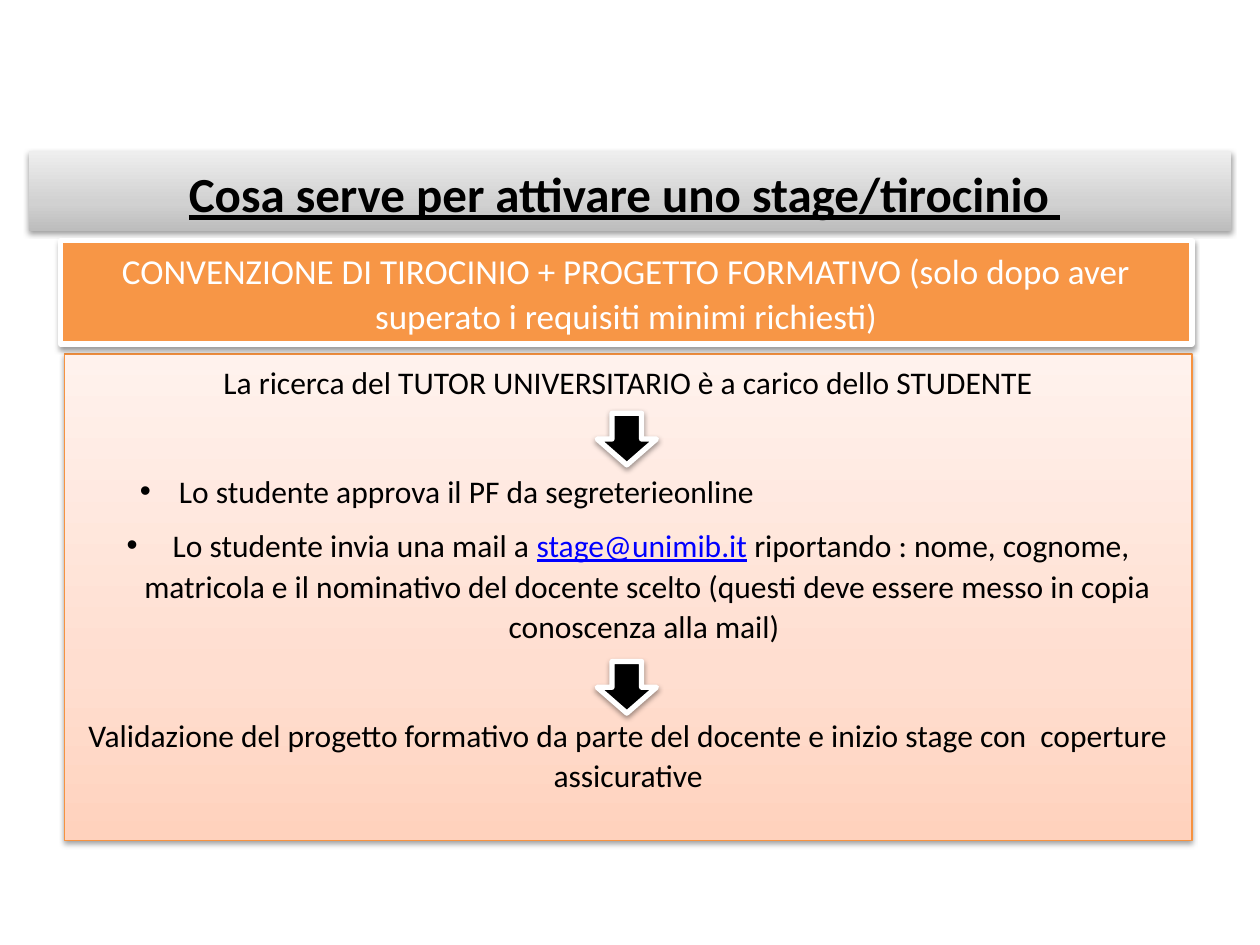
"""Build the slide on what is needed to start an internship."""
from dataclasses import dataclass
from typing import Optional

import lxml.etree
import pptx
import pptx.dml.color
import pptx.enum.shapes
import pptx.enum.text
import pptx.oxml
import pptx.oxml.ns
import pptx.util

Inches = pptx.util.Inches
Pt = pptx.util.Pt
MSO_SHAPE = pptx.enum.shapes.MSO_SHAPE
PP_ALIGN = pptx.enum.text.PP_ALIGN
qn = pptx.oxml.ns.qn

COLORS = {
    "text": "000000",
    "white": "FFFFFF",
    "orange": "F79646",
    "panel_border": "F69240",
    "link": "0000FF",
}
TITLE_STOPS = ((0, "BDBDBD"), (35, "D1D1D1"), (100, "EEEEEE"))
PANEL_STOPS = ((0, "FFD2BD"), (35, "FFDED0"), (100, "FFF2ED"))


@dataclass
class Box:
    left: float
    top: float
    width: float
    height: float

    def lengths(self) -> list:
        return [Inches(n) for n in (self.left, self.top, self.width, self.height)]


@dataclass
class Step:
    runs: tuple
    before: float = 0
    margin: Optional[float] = None
    align: PP_ALIGN = PP_ALIGN.CENTER


EMAIL = "stage@unimib.it"
STEPS = (
    Step(("La ricerca del TUTOR UNIVERSITARIO è a carico dello STUDENTE",)),
    Step(("Lo studente approva il PF da segreterieonline",), 31, 0.81, PP_ALIGN.LEFT),
    Step((" Lo studente invia una mail a ", EMAIL,
          " riportando : nome, cognome, matricola e il nominativo del docente scelto "
          "(questi deve essere messo in copia conoscenza alla mail) "), 0, 0.31),
    Step(("Validazione del progetto formativo da parte del docente e inizio stage con"
          "  coperture assicurative",), 31),
)
ARROW_TOPS = (3.28, 5.25)


def rgb(name: str) -> pptx.dml.color.RGBColor:
    """Look up a colour of the slide."""
    return pptx.dml.color.RGBColor.from_string(COLORS[name])


def place(shape, box: Box, preset: str) -> None:
    """Move a placeholder and give it an outline."""
    shape.left, shape.top, shape.width, shape.height = box.lengths()
    geometry = lxml.etree.SubElement(shape.element.spPr, qn("a:prstGeom"), prst=preset)
    lxml.etree.SubElement(geometry, qn("a:avLst"))


def fill_gradient(shape, stops: tuple) -> None:
    """Fill a placeholder with an upward gradient."""
    gradient = lxml.etree.SubElement(shape.element.spPr, qn("a:gradFill"), rotWithShape="1")
    stop_list = lxml.etree.SubElement(gradient, qn("a:gsLst"))
    for percent, color in stops:
        stop = lxml.etree.SubElement(stop_list, qn("a:gs"), pos=str(percent * 1000))
        lxml.etree.SubElement(stop, qn("a:srgbClr"), val=color)
    lxml.etree.SubElement(gradient, qn("a:lin"), ang="16200000", scaled="0")


def set_line(shape, color: str, width: float) -> None:
    """Draw a solid border."""
    shape.line.color.rgb = rgb(color)
    shape.line.width = Pt(width)


def add_shadow(shape) -> None:
    """Give a shape a soft shadow below it."""
    shape.shadow.inherit = False
    effects = shape.element.spPr.find(qn("a:effectLst"))
    shadow = lxml.etree.SubElement(
        effects, qn("a:outerShdw"), blurRad=str(Pt(3.1)), dist=str(Pt(1.6)),
        dir="5400000", rotWithShape="0")
    color = lxml.etree.SubElement(shadow, qn("a:srgbClr"), val=COLORS["text"])
    lxml.etree.SubElement(color, qn("a:alpha"), val="38000")


def format_paragraph(paragraph, size: float, color: str, align=PP_ALIGN.CENTER,
                     before: float = 0) -> None:
    """Set spacing, alignment and font of a paragraph."""
    paragraph.alignment = align
    paragraph.line_spacing = 1.07
    paragraph.space_before = Pt(before)
    paragraph.space_after = Pt(8)
    paragraph.font.name = "Calibri"
    paragraph.font.size = Pt(size)
    paragraph.font.color.rgb = rgb(color)


def set_bullet(paragraph, margin: Optional[float]) -> None:
    """Indent a bulleted paragraph, or clear the bullet if there is no margin."""
    properties = paragraph._p.get_or_add_pPr()
    properties.set("marL", str(Inches(margin or 0)))
    properties.set("indent", str(Inches(0 if margin is None else -0.31)))
    if margin is None:
        lxml.etree.SubElement(properties, qn("a:buNone"))
    else:
        lxml.etree.SubElement(properties, qn("a:buFont"), typeface="Arial")
        lxml.etree.SubElement(properties, qn("a:buChar"), char="•")


def add_block(slide, preset: MSO_SHAPE, box: Box, fill: str):
    """Add a filled shape with a thick white border."""
    block = slide.shapes.add_shape(preset, *box.lengths())
    block.fill.solid()
    block.fill.fore_color.rgb = rgb(fill)
    set_line(block, "white", 3)
    add_shadow(block)
    return block


def fill_title(title) -> None:
    """Format the title bar."""
    place(title, Box(0.23, 1.2, 9.54, 0.63), "roundRect")
    fill_gradient(title, TITLE_STOPS)
    title.line.fill.background()
    add_shadow(title)
    frame = title.text_frame
    frame.text = "Cosa serve per attivare uno stage/tirocinio "
    frame.auto_size = pptx.enum.text.MSO_AUTO_SIZE.NONE
    frame.vertical_anchor = pptx.enum.text.MSO_ANCHOR.MIDDLE
    frame.margin_right = Inches(0.19)
    heading = frame.paragraphs[0]
    format_paragraph(heading, 28, "text")
    heading.font.bold = True
    heading.font.underline = True


def fill_steps(panel) -> None:
    """Write the steps into the body panel."""
    place(panel, Box(0.51, 2.81, 8.95, 3.86), "rect")
    fill_gradient(panel, PANEL_STOPS)
    set_line(panel, "panel_border", 0.75)
    add_shadow(panel)
    frame = panel.text_frame
    frame.auto_size = pptx.enum.text.MSO_AUTO_SIZE.NONE
    for index, step in enumerate(STEPS):
        paragraph = frame.add_paragraph() if index else frame.paragraphs[0]
        set_bullet(paragraph, step.margin)
        format_paragraph(paragraph, 18, "text", step.align, step.before)
        for text in step.runs:
            run = paragraph.add_run()
            run.text = text
            if text == EMAIL:
                run.font.color.rgb = rgb("link")
                run.font.underline = True


def main() -> None:
    """Build and save the slide."""
    presentation = pptx.Presentation()
    presentation.slide_width = Inches(10)
    presentation.slide_height = Inches(7.5)
    slide = presentation.slides.add_slide(presentation.slide_layouts[1])
    fill_title(slide.shapes.title)
    fill_steps(slide.placeholders[1])

    requirement = add_block(slide, MSO_SHAPE.RECTANGLE, Box(0.48, 1.91, 8.98, 0.82), "orange")
    requirement.text_frame.text = (
        "CONVENZIONE DI TIROCINIO + PROGETTO FORMATIVO "
        "(solo dopo aver superato i requisiti minimi richiesti)")
    requirement.text_frame.vertical_anchor = pptx.enum.text.MSO_ANCHOR.TOP
    format_paragraph(requirement.text_frame.paragraphs[0], 20, "white")

    for top in ARROW_TOPS:
        add_block(slide, MSO_SHAPE.DOWN_ARROW, Box(4.74, top, 0.47, 0.41), "text")
    presentation.save("out.pptx")


if __name__ == "__main__":
    main()
